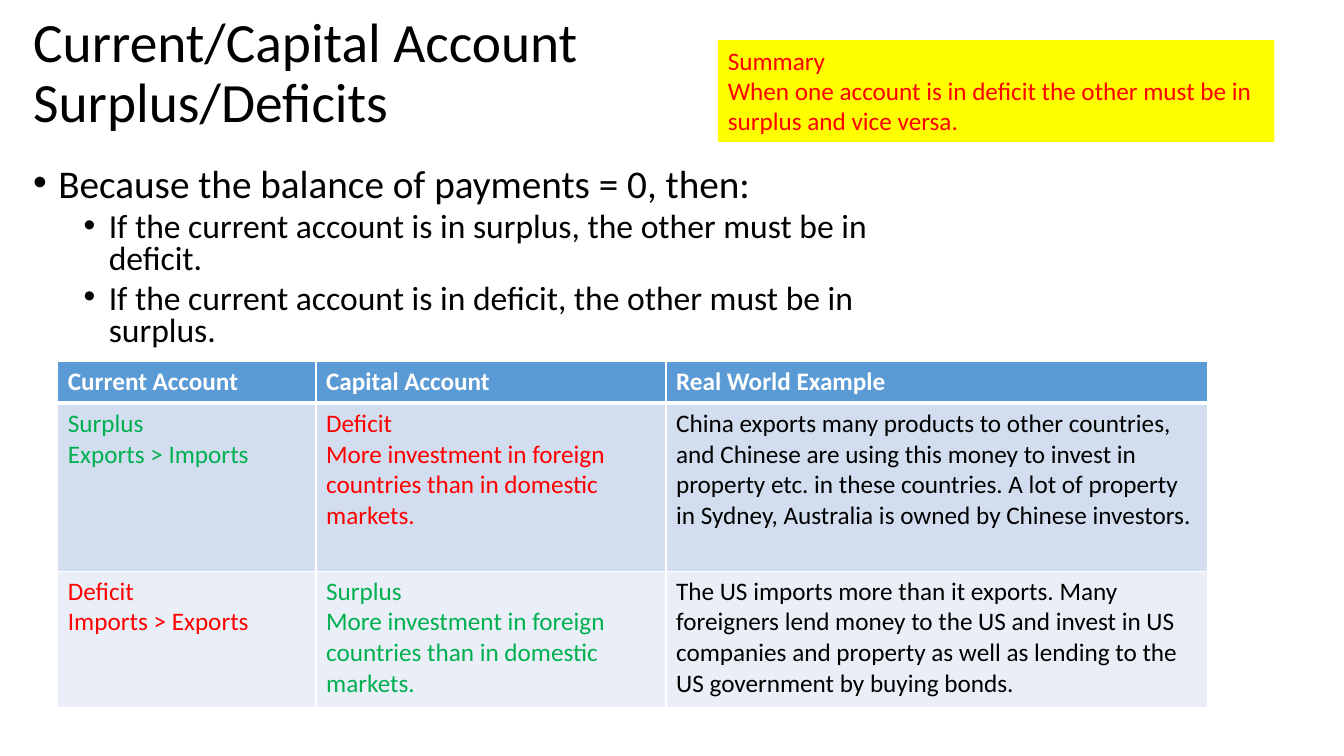
from dataclasses import dataclass

from lxml import etree
from pptx import Presentation
from pptx.dml.color import RGBColor
from pptx.enum.shapes import MSO_SHAPE
from pptx.enum.text import MSO_ANCHOR, MSO_AUTO_SIZE, PP_ALIGN
from pptx.oxml.ns import qn
from pptx.util import Pt

LEFT = PP_ALIGN.LEFT
TOP, MIDDLE = MSO_ANCHOR.TOP, MSO_ANCHOR.MIDDLE
NO_AUTOFIT, GROW = MSO_AUTO_SIZE.NONE, MSO_AUTO_SIZE.SHAPE_TO_FIT_TEXT
RECTANGLE = MSO_SHAPE.RECTANGLE


@dataclass(frozen=True)
class Theme:
    font: str = "Calibri"
    title_size: float = 39.6
    bullet_sizes: tuple = (28, 24)
    text_size: float = 18
    black: str = "000000"
    white: str = "FFFFFF"
    surplus: str = "00B050"
    deficit: str = "FF0000"
    summary_fill: str = "FFFF00"
    row_fills: tuple = ("5B9BD5", "D2DEEF", "EAEFF7")


THEME = Theme()

TITLE = "Current/Capital Account Surplus/Deficits"
BULLETS = [
    (0, "Because the balance of payments = 0, then:"),
    (1, "If the current account is in surplus, the other must be in deficit."),
    (1, "If the current account is in deficit, the other must be in surplus."),
]
SUMMARY = [
    "Summary",
    "When one account is in deficit the other must be in surplus and vice versa.",
]
INVESTMENT = "More investment in foreign countries than in domestic markets."

# Each cell is a colour and its paragraphs
ACCOUNT_ROWS = [
    [(THEME.white, [heading]) for heading in
     ("Current Account", "Capital Account", "Real World Example")],
    [
        (THEME.surplus, ["Surplus", "Exports > Imports"]),
        (THEME.deficit, ["Deficit", INVESTMENT]),
        (THEME.black, [
            "China exports many products to other countries, and Chinese are "
            "using this money to invest in property etc. in these countries. "
            "A lot of property in Sydney, Australia is owned by Chinese investors."]),
    ],
    [
        (THEME.deficit, ["Deficit", "Imports > Exports"]),
        (THEME.surplus, ["Surplus", INVESTMENT]),
        (THEME.black, [
            "The US imports more than it exports. Many foreigners lend money "
            "to the US and invest in US companies and property as well as "
            "lending to the US government by buying bonds."]),
    ],
]
COLUMN_WIDTHS = (184.5, 250, 386.5)
ROW_HEIGHTS = (30, 120, 97.5)


def place(shape, left, top, width, height):
    shape.left, shape.top = Pt(left), Pt(top)
    shape.width, shape.height = Pt(width), Pt(height)


def add_run(paragraph, text, size, color, bold=False):
    run = paragraph.add_run()
    run.text = text
    run.font.name = THEME.font
    run.font.size = Pt(size)
    run.font.bold = bold
    run.font.color.rgb = RGBColor.from_string(color)


def add_paragraphs(frame, texts, size, color, bold=False):
    """Write the texts as left-aligned paragraphs and return them."""
    paragraphs = []
    for index, text in enumerate(texts):
        paragraph = frame.add_paragraph() if index else frame.paragraphs[0]
        paragraph.alignment = LEFT
        add_run(paragraph, text, size, color, bold)
        paragraphs.append(paragraph)
    return paragraphs


def set_bullet(paragraph, indent, hanging):
    properties = paragraph._p.get_or_add_pPr()
    properties.set("marL", str(Pt(indent)))
    properties.set("indent", str(-Pt(hanging)))
    etree.SubElement(properties, qn("a:buFont")).set("typeface", "Arial")
    etree.SubElement(properties, qn("a:buChar")).set("char", "•")


def set_borders(cell, color, bottom_width):
    properties = cell._tc.get_or_add_tcPr()
    widths = {"a:lnL": 1, "a:lnR": 1, "a:lnT": 1, "a:lnB": bottom_width}
    for position, (tag, width) in enumerate(widths.items()):
        line = etree.Element(qn(tag), w=str(Pt(width)))
        fill = etree.SubElement(line, qn("a:solidFill"))
        etree.SubElement(fill, qn("a:srgbClr")).set("val", color)
        properties.insert(position, line)


def fill_title(title):
    place(title, 16.5, 5, 476, 96.5)
    frame = title.text_frame
    frame.word_wrap = True
    frame.auto_size = NO_AUTOFIT
    frame.vertical_anchor = MIDDLE
    paragraph, = add_paragraphs(frame, [TITLE], THEME.title_size, THEME.black)
    paragraph.line_spacing = 0.9


def fill_bullets(body):
    place(body, 16.5, 116.5, 628, 142.5)
    frame = body.text_frame
    frame.word_wrap = True
    frame.auto_size = NO_AUTOFIT
    frame.vertical_anchor = TOP
    for index, (level, text) in enumerate(BULLETS):
        paragraph = frame.add_paragraph() if index else frame.paragraphs[0]
        paragraph.level = level
        paragraph.alignment = LEFT
        paragraph.line_spacing = 0.8
        paragraph.space_before = Pt(5 if level else 10)
        set_bullet(paragraph, 18 + 36 * level, 18)
        add_run(paragraph, text, THEME.bullet_sizes[level], THEME.black)


def add_account_table(slide):
    frame = slide.shapes.add_table(
        len(ROW_HEIGHTS), len(COLUMN_WIDTHS), Pt(41.3), Pt(258),
        Pt(sum(COLUMN_WIDTHS)), Pt(sum(ROW_HEIGHTS)))
    table = frame.table
    for column, width in zip(table.columns, COLUMN_WIDTHS):
        column.width = Pt(width)
    for row, height in zip(table.rows, ROW_HEIGHTS):
        row.height = Pt(height)
    for row_index, row in enumerate(ACCOUNT_ROWS):
        is_header = row_index == 0
        for column_index, (color, texts) in enumerate(row):
            cell = table.cell(row_index, column_index)
            cell.fill.solid()
            cell.fill.fore_color.rgb = RGBColor.from_string(THEME.row_fills[row_index])
            set_borders(cell, THEME.white, 3 if is_header else 1)
            add_paragraphs(cell.text_frame, texts, THEME.text_size, color, is_header)


def add_summary(slide):
    shape = slide.shapes.add_shape(RECTANGLE, Pt(512.8), Pt(28.6), Pt(397.5), Pt(72.7))
    shape.shadow.inherit = False
    shape.fill.solid()
    shape.fill.fore_color.rgb = RGBColor.from_string(THEME.summary_fill)
    shape.line.fill.background()
    frame = shape.text_frame
    frame.word_wrap = True
    frame.auto_size = GROW
    frame.vertical_anchor = TOP
    add_paragraphs(frame, SUMMARY, THEME.text_size, THEME.deficit)


def main():
    presentation = Presentation()
    presentation.slide_width, presentation.slide_height = Pt(960), Pt(540)
    slide = presentation.slides.add_slide(presentation.slide_layouts[1])

    # Heading and bullet list
    fill_title(slide.shapes.title)
    fill_bullets(slide.placeholders[1])

    # Account comparison and summary box
    add_account_table(slide)
    add_summary(slide)

    presentation.save("out.pptx")


if __name__ == "__main__":
    main()
